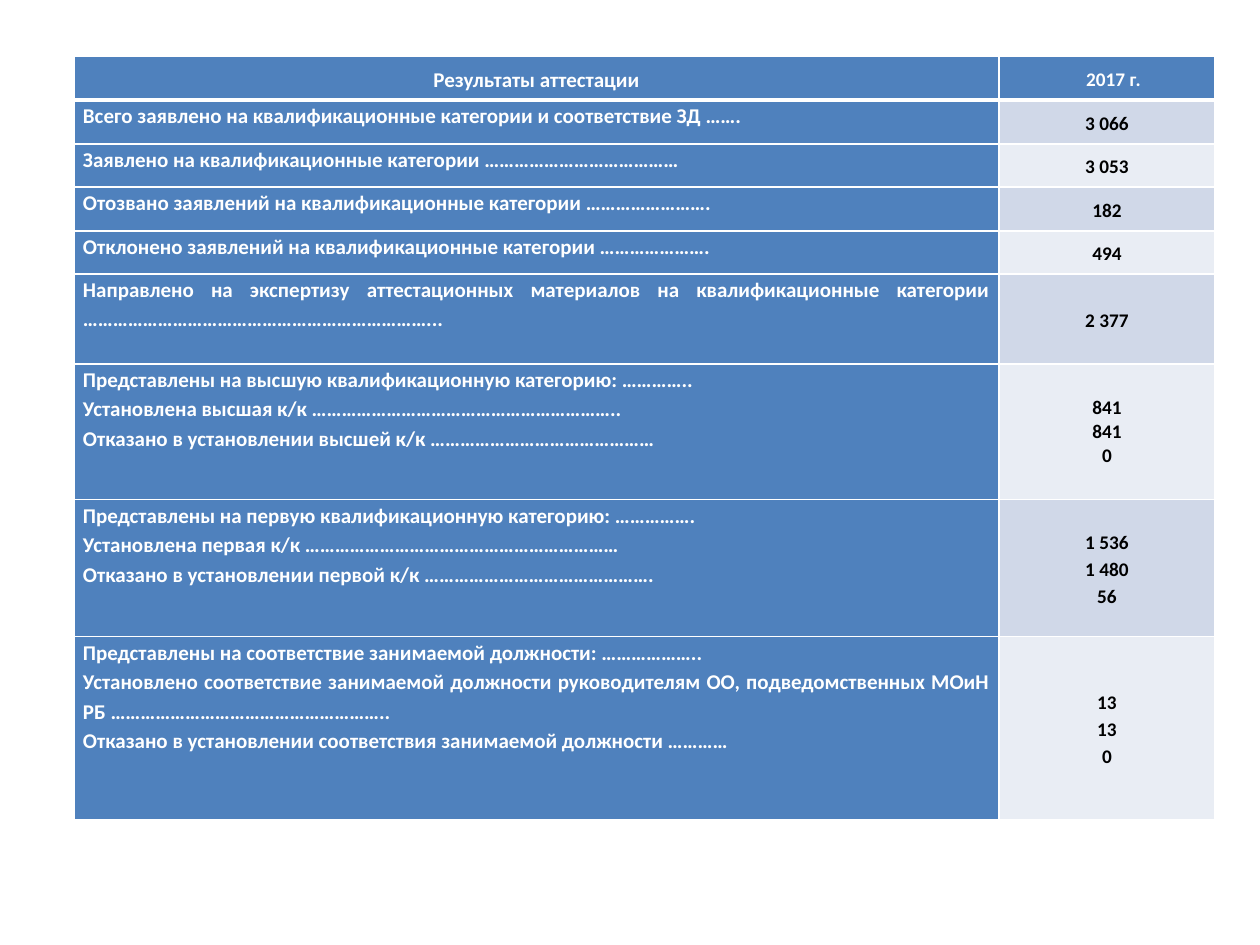
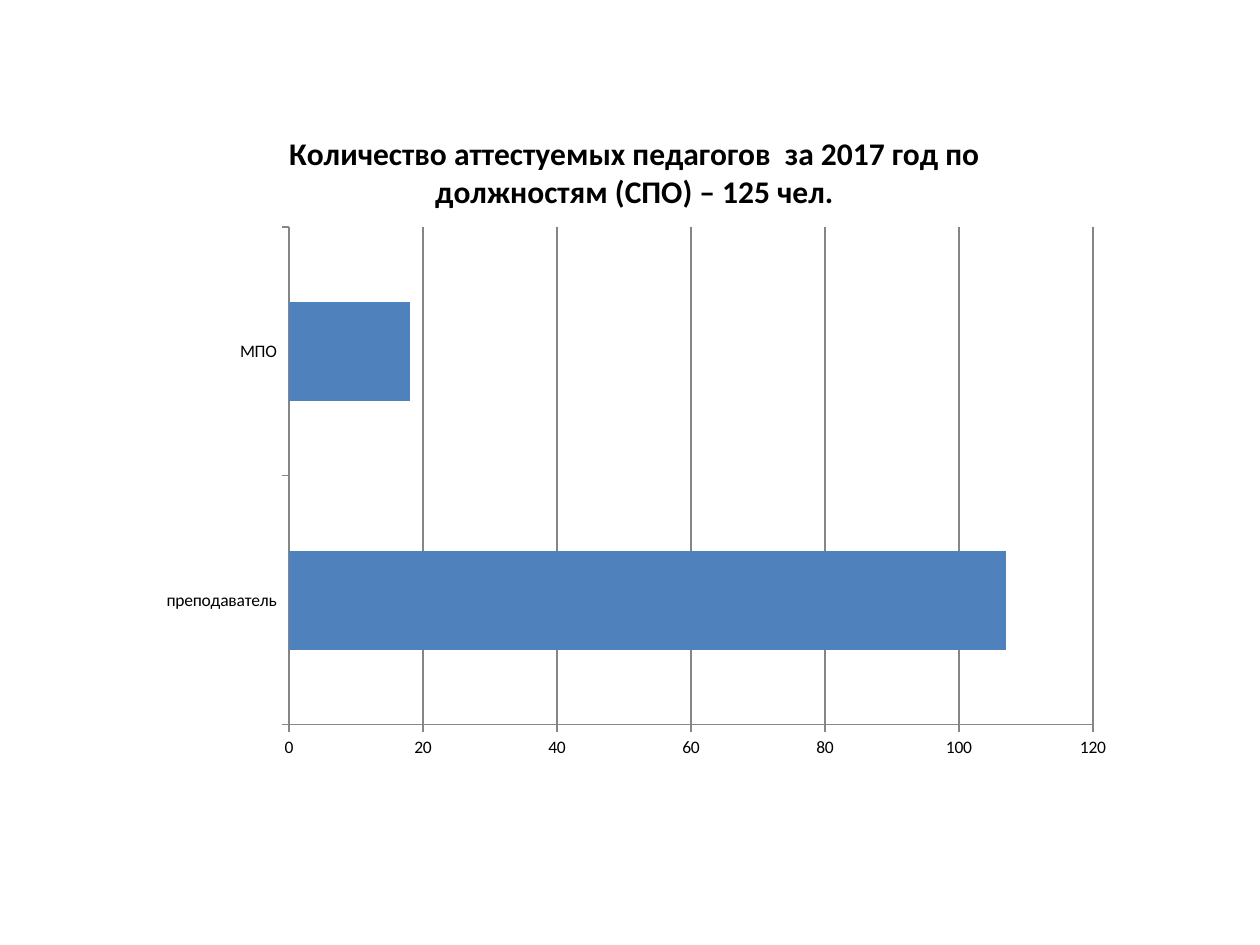
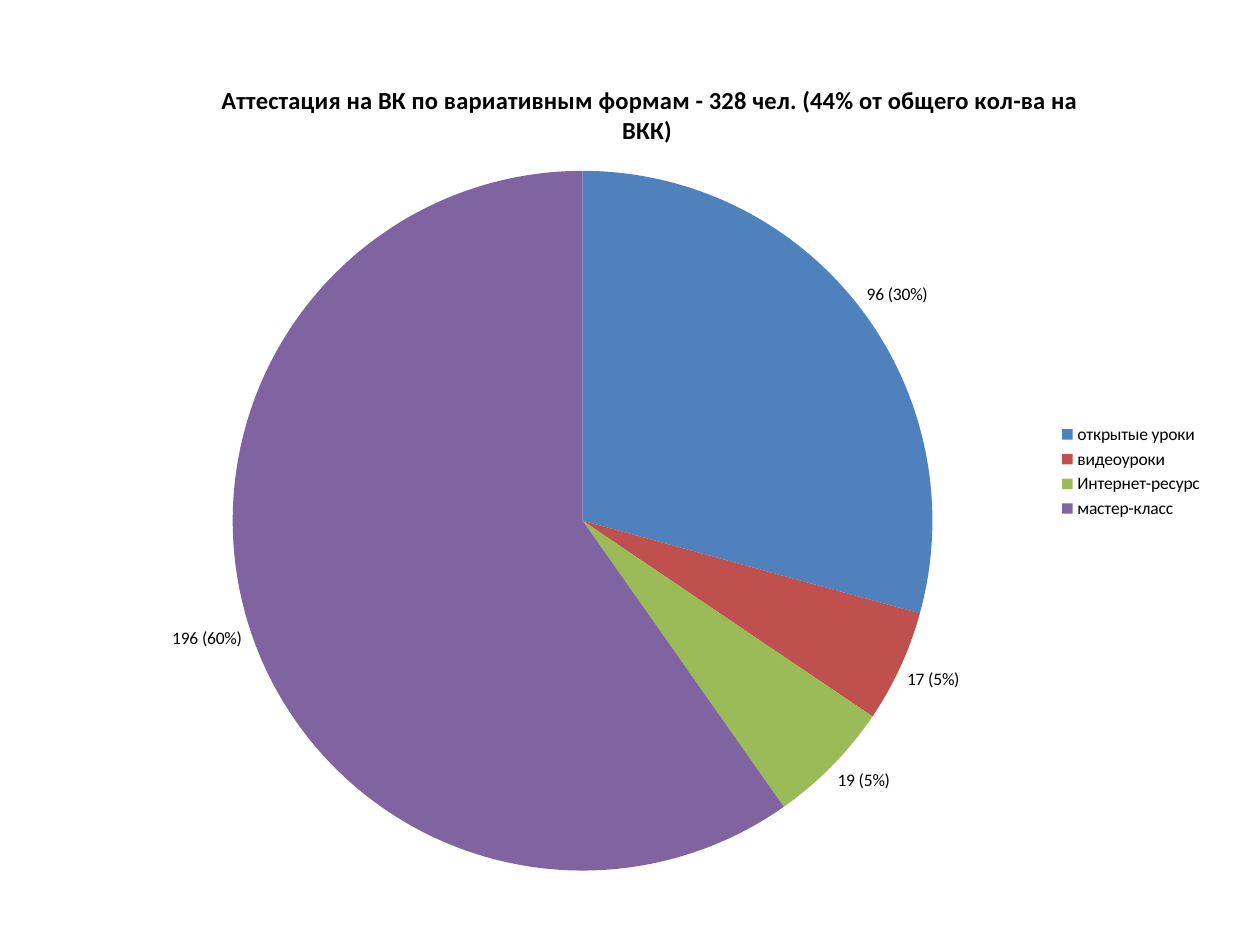
from lxml.etree import SubElement
from pptx import Presentation
from pptx.chart.data import CategoryChartData
from pptx.dml.color import RGBColor
from pptx.enum.chart import (XL_CHART_TYPE, XL_LABEL_POSITION,
                             XL_LEGEND_POSITION, XL_TICK_MARK)
from pptx.enum.text import MSO_ANCHOR, PP_ALIGN
from pptx.oxml.ns import qn
from pptx.util import Emu, Pt

PX = 914400 // 126
FONT = "Calibri"

BLUE = RGBColor(0x4F, 0x81, 0xBD)
RED = RGBColor(0xC0, 0x50, 0x4D)
GREEN = RGBColor(0x9B, 0xBB, 0x59)
PURPLE = RGBColor(0x80, 0x64, 0xA2)
PALE_BANDS = (RGBColor(0xD0, 0xD8, 0xE8), RGBColor(0xE9, 0xED, 0xF4))
GRAY = RGBColor(0x86, 0x86, 0x86)
WHITE = RGBColor(0xFF, 0xFF, 0xFF)
BLACK = RGBColor(0, 0, 0)

# Content: certification results (row height, statements, counts)
HEADER = (44, ["Результаты аттестации"], ["2017 г."])
RESULTS = [
    (44, ["Всего заявлено на квалификационные категории и соответствие ЗД ……."],
     ["3 066"]),
    (43, ["Заявлено на квалификационные категории …………………………………"],
     ["3 053"]),
    (44, ["Отозвано заявлений на квалификационные категории ……………………."],
     ["182"]),
    (43, ["Отклонено заявлений на квалификационные категории …………………."],
     ["494"]),
    (90, ["Направлено на экспертизу аттестационных материалов на "
          "квалификационные категории "
          "……………………………………………………………..."],
     ["2 377"]),
    (136, ["Представлены на высшую квалификационную категорию: …………..",
           "Установлена высшая к/к ……………………………………………………..",
           "Отказано в установлении высшей к/к ………………………………………"],
     ["841", "841", "0"]),
    (137, ["Представлены на первую квалификационную категорию: …………….",
           "Установлена первая к/к ………………………………………………………",
           "Отказано в установлении первой к/к ………………………………………."],
     ["1 536", "1 480", "56"]),
    (183, ["Представлены на соответствие занимаемой должности: ………………..",
           "Установлено соответствие занимаемой должности руководителям ОО, "
           "подведомственных МОиН РБ ………………………………………………..",
           "Отказано в установлении соответствия занимаемой должности …………"],
     ["13", "13", "0"]),
]
TABLE_AT = (74, 56)
COLUMN_WIDTHS = (925, 216)
SINGLE_SPACED_ROW = 6

# Content: charts
POSITIONS = {
    "title": "Количество аттестуемых педагогов  за 2017 год по должностям "
             "(СПО) – 125 чел.",
    "title_size": 18,
    "box": (143, 106, 983, 665),
    "values": {"преподаватель": 107, "МПО": 18},
}
BARS_AREA = (289, 227, 804, 498)
FORMS = {
    "title": "Аттестация на ВК по вариативным формам - 328 чел. "
             "(44% от общего кол-ва на ВКК) ",
    "title_size": 14,
    "box": (84, 55, 1132, 833),
    "values": {"открытые уроки": 96, "видеоуроки": 17,
               "Интернет-ресурс": 19, "мастер-класс": 196},
}
FORM_MARKS = [(BLUE, "96 (30%)"), (RED, "17 (5%)"),
              (GREEN, "19 (5%) "), (PURPLE, "196 (60%)")]


def px(*lengths):
    return [Emu(length * PX) for length in lengths]


def set_all(target, **values):
    for key, value in values.items():
        setattr(target, key, value)


def set_font(font, size, color=BLACK, bold=False):
    set_all(font, name=FONT, size=Pt(size), bold=bold)
    font.color.rgb = color


def fill(target, color):
    target.fill.solid()
    target.fill.fore_color.rgb = color


def add_borders(cell, bottom_width, top_width):
    """White cell edges; they must stand before the fill."""
    properties = cell._tc.get_or_add_tcPr()
    widths = {"a:lnL": 1, "a:lnR": 1, "a:lnT": top_width, "a:lnB": bottom_width}
    for position, (tag, width) in enumerate(widths.items()):
        edge = SubElement(properties, qn(tag), w=str(Pt(width)))
        paint = SubElement(edge, qn("a:solidFill"))
        SubElement(paint, qn("a:srgbClr"), val=str(WHITE))
        properties.insert(position, edge)


def write_cell(cell, lines, size, color, align, spacing):
    frame = cell.text_frame
    frame.text = "\n".join(lines)
    for paragraph in frame.paragraphs:
        set_all(paragraph, alignment=align, line_spacing=spacing)
        set_font(paragraph.runs[0].font, size, color, bold=True)


def build_results(slide):
    rows = [HEADER] + RESULTS
    heights = [row[0] for row in rows]
    table = slide.shapes.add_table(
        len(rows), 2, *px(*TABLE_AT, sum(COLUMN_WIDTHS), sum(heights))).table
    for column, width in zip(table.columns, px(*COLUMN_WIDTHS)):
        column.width = width
    for index, (height, statements, counts) in enumerate(rows):
        table.rows[index].height = px(height)[0]
        is_header = index == 0
        band = BLUE if is_header else PALE_BANDS[(index - 1) % 2]
        count_color = WHITE if is_header else BLACK
        count_spacing = 1.0 if index == SINGLE_SPACED_ROW else 1.15
        statement_align = PP_ALIGN.CENTER if is_header else PP_ALIGN.JUSTIFY
        statement_anchor = MSO_ANCHOR.MIDDLE if is_header else MSO_ANCHOR.TOP
        statement, count = table.cell(index, 0), table.cell(index, 1)
        for cell, color, anchor in ((statement, BLUE, statement_anchor),
                                    (count, band, MSO_ANCHOR.MIDDLE)):
            side = px(9)[0]
            set_all(cell, margin_left=side, margin_right=side, margin_top=0,
                    margin_bottom=0, vertical_anchor=anchor)
            fill(cell, color)
            add_borders(cell, 3 if is_header else 1, 3 if index == 1 else 1)
        write_cell(statement, statements, 12, WHITE, statement_align, 1.15)
        write_cell(count, counts, 11, count_color, PP_ALIGN.CENTER, count_spacing)
        if is_header:
            count.margin_left = px(22)[0]


def add_titled_chart(slide, kind, content):
    data = CategoryChartData()
    data.categories = list(content["values"])
    data.add_series("Series 1", list(content["values"].values()))
    chart = slide.shapes.add_chart(kind, *px(*content["box"]), data).chart
    set_font(chart.font, 10)
    title = chart.chart_title.text_frame
    title.text = content["title"]
    set_font(title.paragraphs[0].font, content["title_size"], bold=True)
    return chart


def place_plot(chart, area, box):
    """Fix the inner plot area as shares of the chart box."""
    plot_area = chart._chartSpace.chart.plotArea
    for old_layout in plot_area.findall(qn("c:layout")):
        plot_area.remove(old_layout)
    layout = SubElement(plot_area, qn("c:layout"))
    plot_area.insert(0, layout)
    manual = SubElement(layout, qn("c:manualLayout"))
    left, top, width, height = area
    settings = {
        "layoutTarget": "inner", "xMode": "edge", "yMode": "edge",
        "x": (left - box[0]) / box[2], "y": (top - box[1]) / box[3],
        "w": width / box[2], "h": height / box[3],
    }
    for tag, value in settings.items():
        SubElement(manual, qn("c:" + tag), val=str(value))


def build_positions(slide):
    chart = add_titled_chart(slide, XL_CHART_TYPE.BAR_CLUSTERED, POSITIONS)
    chart.has_legend = False
    place_plot(chart, BARS_AREA, POSITIONS["box"])
    set_all(chart.plots[0], gap_width=150, vary_by_categories=False)
    fill(chart.series[0].format, BLUE)
    counts = chart.value_axis
    counts.has_major_gridlines = True
    for axis in (chart.category_axis, counts):
        set_all(axis, major_tick_mark=XL_TICK_MARK.OUTSIDE,
                minor_tick_mark=XL_TICK_MARK.NONE)
    for part in (chart.category_axis, counts, counts.major_gridlines):
        part.format.line.color.rgb = GRAY
        part.format.line.width = Pt(0.7)


def build_forms(slide):
    chart = add_titled_chart(slide, XL_CHART_TYPE.PIE, FORMS)
    chart.has_legend = True
    set_all(chart.legend, position=XL_LEGEND_POSITION.RIGHT,
            include_in_layout=False)
    chart.plots[0].vary_by_categories = True
    forms = chart.series[0]
    set_all(forms.data_labels, show_value=True, show_percentage=False,
            position=XL_LABEL_POSITION.OUTSIDE_END)
    for index, (color, caption) in enumerate(FORM_MARKS):
        point = forms.points[index]
        fill(point.format, color)
        label = point.data_label
        label.text_frame.text = caption
        set_font(label.text_frame.paragraphs[0].runs[0].font, 10)
        label.position = XL_LABEL_POSITION.OUTSIDE_END


def main():
    deck = Presentation()
    deck.slide_width, deck.slide_height = px(1260, 945)
    for build in (build_results, build_positions, build_forms):
        build(deck.slides.add_slide(deck.slide_layouts[6]))
    deck.save("out.pptx")


if __name__ == "__main__":
    main()
